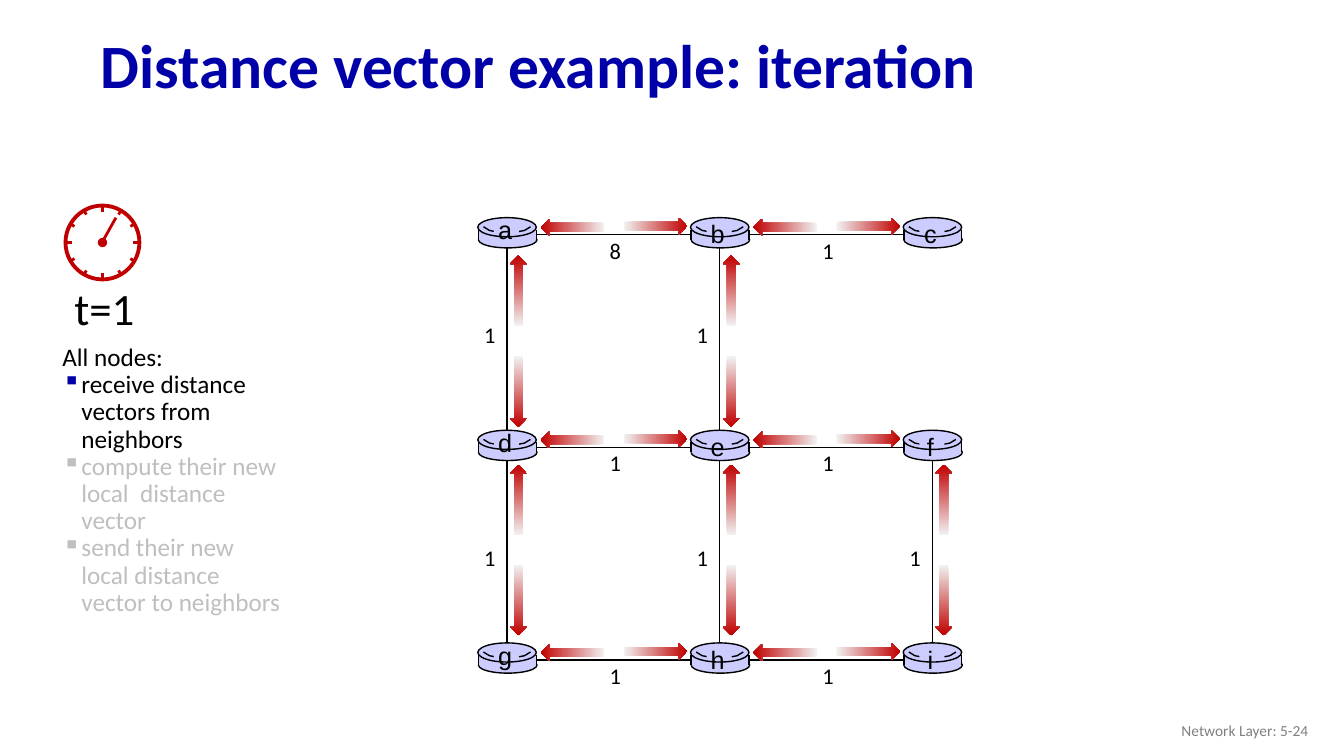
from dataclasses import dataclass
from math import cos, radians, sin

from lxml.etree import SubElement
from pptx import Presentation
from pptx.dml.color import RGBColor
from pptx.enum.shapes import MSO_CONNECTOR, MSO_SHAPE
from pptx.enum.text import MSO_ANCHOR, PP_ALIGN
from pptx.oxml.ns import qn
from pptx.util import Inches, Pt


@dataclass(frozen=True)
class Theme:
    title: str = "0000A8"
    text: str = "000000"
    muted: str = "BFBFBF"
    footer: str = "808080"
    red: str = "C00000"
    fade: str = "F2F2F2"
    router: str = "CCCCFF"
    font: str = "Calibri"
    letter_font: str = "Arial"
    title_size: int = 44
    time_size: int = 32
    body_size: int = 18
    cost_size: int = 16
    footer_size: int = 11


T = Theme()
COLUMNS = 40
WIDTH, HEIGHT = Inches(13.33), Inches(7.5)

# Network: origin and pitch in slide columns, nodes as letters by row
NODE_X, NODE_Y, PITCH = 15.09, 6.99, 6.33
NODES = ("abc", "def", "ghi")
ROW_LINKS = {(r, c): "1" for r in range(3) for c in range(2)} | {(0, 0): "8"}
COLUMN_LINKS = ((0, 0), (0, 1), (1, 0), (1, 1), (1, 2))
# Below a node, by row: cost label top, up arrow centre, down arrow centre
COLUMN_OFFSETS = ((2.42, 1.67, 4.67), (2.73, 1.57, 4.55))


def u(n):
    """Length of n slide columns."""
    return int(WIDTH * n / COLUMNS)


def node(r, c):
    return NODE_X + c * PITCH, NODE_Y + r * PITCH


def rgb(color):
    return RGBColor.from_string(color)


def add_line(shapes, x1, y1, x2, y2, color=T.text, width=1):
    line = shapes.add_connector(MSO_CONNECTOR.STRAIGHT, u(x1), u(y1), u(x2), u(y2))
    line.line.color.rgb = rgb(color)
    line.line.width = Pt(width)
    SubElement(line._element.spPr, qn("a:effectLst"))


def finish(shape, fill=None, line=None, width=1):
    shape.shadow.inherit = False
    if fill:
        shape.fill.solid()
        shape.fill.fore_color.rgb = rgb(fill)
    else:
        shape.fill.background()
    if line:
        shape.line.color.rgb = rgb(line)
        shape.line.width = Pt(width)
    else:
        shape.line.fill.background()


def add_shape(shapes, kind, x, y, w, h, **look):
    shape = shapes.add_shape(kind, u(x), u(y), u(w), u(h))
    finish(shape, **look)


def write(p, text, size, color=T.text, name=T.font, bold=False):
    r = p.add_run()
    r.text = text
    for key, value in {"size": Pt(size), "name": name, "bold": bold}.items():
        setattr(r.font, key, value)
    r.font.color.rgb = rgb(color)


def add_text(shapes, frame, text, size, align=PP_ALIGN.LEFT, wrap=False,
             anchor=MSO_ANCHOR.TOP, **font):
    tf = shapes.add_textbox(*map(u, frame)).text_frame
    tf.word_wrap, tf.vertical_anchor = wrap, anchor
    p = tf.paragraphs[0]
    p.alignment = align
    write(p, text, size, **font)
    return tf


def add_bullet(tf, text, color, bullet_color):
    p = tf.add_paragraph()
    p.line_spacing = 0.9
    write(p, text, T.body_size, color)
    pPr = p._p.get_or_add_pPr()
    pPr.set("marL", str(u(0.57)))
    pPr.set("indent", str(-u(0.57)))
    SubElement(SubElement(pPr, qn("a:buClr")), qn("a:srgbClr")).set("val", bullet_color)
    SubElement(pPr, qn("a:buChar")).set("char", "▪")


def add_title(s, text):
    title = s.shapes.title
    frame = {"left": 2.7, "top": 0.57, "width": 34.5, "height": 2.94}
    for key, value in frame.items():
        setattr(title, key, u(value))
    tf = title.text_frame
    tf.vertical_anchor = MSO_ANCHOR.MIDDLE
    p = tf.paragraphs[0]
    p.alignment, p.line_spacing = PP_ALIGN.LEFT, 0.9
    write(p, text, T.title_size, T.title, bold=True)


def add_clock(s):
    shapes = s.shapes.add_group_shape().shapes
    x, y, radius = 3.05, 7.22, 1.1
    add_shape(shapes, MSO_SHAPE.OVAL, x - radius, y - radius, 2 * radius, 2 * radius,
              line=T.red, width=2.75)
    for hour in range(12):
        dx, dy = cos(radians(30 * hour)), sin(radians(30 * hour))
        inner = 0.92 if hour % 3 == 0 else 0.96
        add_line(shapes, x + inner * dx, y + inner * dy,
                 x + 1.12 * dx, y + 1.12 * dy, T.red, 2)
    add_shape(shapes, MSO_SHAPE.OVAL, x - 0.14, y - 0.14, 0.28, 0.28, fill=T.red)
    add_line(shapes, x + 0.4, y - 0.74, x - 0.03, y + 0.03, T.red, 2)
    add_text(shapes, (1.92, 8.22, 2.43, 1.92), "t=1", T.time_size)


def add_router(s, r, c, letter):
    shapes = s.shapes.add_group_shape().shapes
    x, y = node(r, c)
    add_shape(shapes, MSO_SHAPE.OVAL, x - 0.85, y - 0.09, 1.74, 0.48,
              fill=T.router, line=T.text)
    add_shape(shapes, MSO_SHAPE.RECTANGLE, x - 0.85, y - 0.15, 1.72, 0.3, fill=T.router)
    for side in (-0.85, 0.87):
        add_line(shapes, x + side, y - 0.15, x + side, y + 0.15)
    add_shape(shapes, MSO_SHAPE.OVAL, x - 0.87, y - 0.51, 1.74, 0.57,
              fill=T.router, line=T.text)
    for side in (-1, 1):
        arc = [(u(x + side * dx), u(y + dy))
               for dx, dy in ((0.7, -0.24), (0.52, -0.13), (0.36, -0.1))]
        builder = shapes.build_freeform(*arc[0], scale=1.0)
        builder.add_line_segments(arc[1:], close=False)
        finish(builder.convert_to_shape(), line=T.text)
    add_shape(shapes, MSO_SHAPE.RECTANGLE, x - 0.39, y - 0.36, 0.66, 0.33, fill=T.router)
    top = y - (0.75 if c == 0 else 0.63)
    add_text(shapes, (x - 0.57, top, 1.02, 1.2), letter, T.body_size,
             align=PP_ALIGN.CENTER, name=T.letter_font)


def add_message(s, x, y, length, rotation):
    """Fading arrow centred on x, y."""
    arrow = s.shapes.add_shape(MSO_SHAPE.RIGHT_ARROW, u(x - length / 2), u(y - 0.26),
                               u(length), u(0.51))
    finish(arrow)
    arrow.rotation = rotation
    arrow.fill.gradient()
    arrow.fill.gradient_angle = 0
    for stop, color, position in zip(arrow.fill.gradient_stops, (T.fade, T.red), (0, 1)):
        stop.color.rgb, stop.position = rgb(color), position


def add_cost(s, x, y, cost):
    add_text(s.shapes, (x, y, 0.97, 1.11), cost, T.cost_size)


def add_network(s):
    for r, c in ROW_LINKS:
        add_line(s.shapes, *node(r, c), *node(r, c + 1))
    for r, c in COLUMN_LINKS:
        add_line(s.shapes, *node(r, c), *node(r + 1, c))
    for (r, c), cost in ROW_LINKS.items():
        x, y = node(r, c)
        add_cost(s, x + 2.76, y - 0.09, cost)
        add_message(s, x + 1.95, y - 0.22, 1.89, 180)
        add_message(s, x + 4.42, y - 0.25, 1.89, 0)
    for r, c in COLUMN_LINKS:
        x, y = node(r, c)
        label, up, down = COLUMN_OFFSETS[r]
        add_cost(s, x - 0.98, y + label, "1")
        add_message(s, x + 0.34, y + up, 2.1, 270)
        add_message(s, x + 0.34, y + down, 2.1, 90)
    for r, letters in enumerate(NODES):
        for c, letter in enumerate(letters):
            add_router(s, r, c, letter)


def main():
    prs = Presentation()
    prs.slide_width, prs.slide_height = WIDTH, HEIGHT
    s = prs.slides.add_slide(prs.slide_layouts[5])
    add_title(s, "Distance vector example: iteration")
    add_clock(s)
    tf = add_text(s.shapes, (1.56, 10.11, 7.2, 8.49), "All nodes:", T.body_size, wrap=True)
    tf.paragraphs[0].line_spacing = 0.9
    add_bullet(tf, "receive distance vectors from neighbors", T.text, T.title)
    for step in ("compute their new local  distance vector",
                 "send their new local distance vector to neighbors"):
        add_bullet(tf, step, T.muted, T.muted)
    add_network(s)
    add_text(s.shapes, (30.24, 21.15, 9, 1.2), "Network Layer: 5-24", T.footer_size,
             align=PP_ALIGN.RIGHT, wrap=True, anchor=MSO_ANCHOR.MIDDLE, color=T.footer)
    prs.save("out.pptx")


if __name__ == "__main__":
    main()
